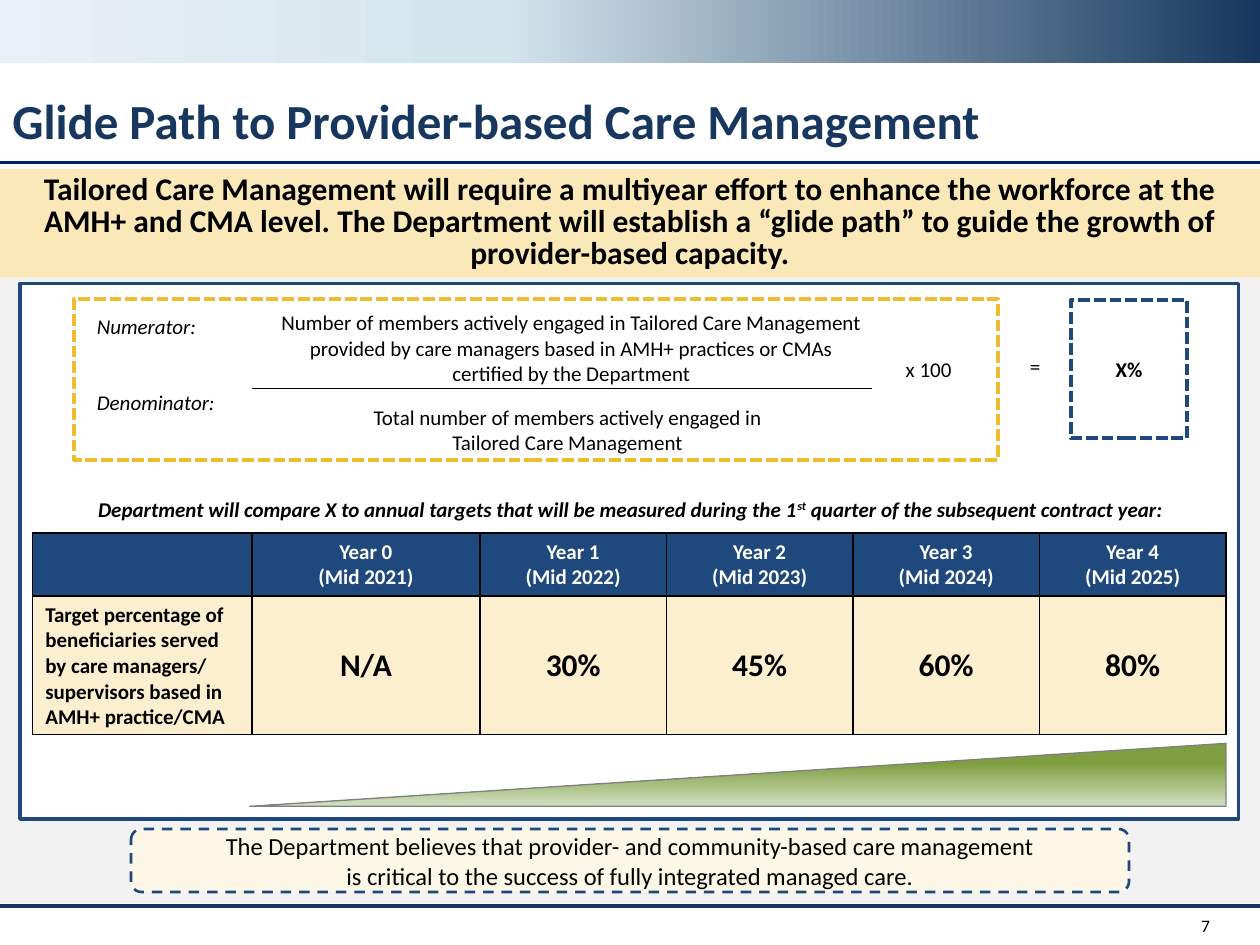
from dataclasses import dataclass

from lxml import etree
from pptx import Presentation
from pptx.dml.color import RGBColor
from pptx.enum.dml import MSO_LINE
from pptx.enum.shapes import MSO_CONNECTOR, MSO_SHAPE
from pptx.enum.text import MSO_ANCHOR, PP_ALIGN
from pptx.oxml.ns import qn
from pptx.util import Inches, Pt

LEFT, CENTER, RIGHT = PP_ALIGN.LEFT, PP_ALIGN.CENTER, PP_ALIGN.RIGHT
TOP, MIDDLE = MSO_ANCHOR.TOP, MSO_ANCHOR.MIDDLE
RECTANGLE, ROUNDED = MSO_SHAPE.RECTANGLE, MSO_SHAPE.ROUNDED_RECTANGLE
TRIANGLE = MSO_SHAPE.RIGHT_TRIANGLE
DASH, SQUARE_DASH = MSO_LINE.DASH, MSO_LINE.SQUARE_DOT


@dataclass(frozen=True)
class Theme:
    font: str = "Calibri"
    navy: str = "17375E"
    rule: str = "002060"
    blue: str = "1F497D"
    gold: str = "EFBB2F"
    banner: str = "FAE8B8"
    cream: str = "FDF7E7"
    cell: str = "FBEFCF"
    gray: str = "F2F2F2"
    edge: str = "808080"
    white: str = "FFFFFF"
    black: str = "000000"
    header_stops: tuple = ((0, "17375E"), (60, "D3E4ED"), (100, "E9F1F6"))
    wedge_stops: tuple = ((31, "7F9E3F"), (100, "D3E0C3"))
    title: int = 28
    large: int = 18
    medium: int = 14
    body: int = 12
    small: int = 10


THEME = Theme()


@dataclass(frozen=True)
class Box:
    left: float
    top: float
    width: float
    height: float

    def lengths(self) -> tuple:
        return tuple(Inches(n) for n in (self.left, self.top, self.width, self.height))


@dataclass(frozen=True)
class TextStyle:
    size: int = THEME.body
    color: str = THEME.black
    bold: bool = False
    italic: bool = False
    align: PP_ALIGN = CENTER
    anchor: MSO_ANCHOR = TOP
    spacing: float = 1.0


@dataclass(frozen=True)
class Outline:
    color: str
    width: float
    dash: MSO_LINE | None = None


def rgb(color: str) -> RGBColor:
    return RGBColor.from_string(color)


def format_text(text_frame, style: TextStyle) -> None:
    for paragraph in text_frame.paragraphs:
        paragraph.alignment = style.align
        paragraph.line_spacing = style.spacing
        for run in paragraph.runs:
            font = run.font
            font.name, font.size = THEME.font, Pt(style.size)
            font.bold, font.italic = style.bold, style.italic
            font.color.rgb = rgb(style.color)


def write(shape, text: str, style: TextStyle):
    text_frame = shape.text_frame
    text_frame.word_wrap = True
    text_frame.vertical_anchor = style.anchor
    text_frame.text = text
    format_text(text_frame, style)
    return text_frame


def add_text(slide, box: Box, text: str, style: TextStyle):
    return write(slide.shapes.add_textbox(*box.lengths()), text, style)


def add_panel(slide, box: Box, fill: str | None = None,
              outline: Outline | None = None, kind=RECTANGLE):
    shape = slide.shapes.add_shape(kind, *box.lengths())
    shape.shadow.inherit = False
    if fill:
        shape.fill.solid()
        shape.fill.fore_color.rgb = rgb(fill)
    else:
        shape.fill.background()
    if outline:
        shape.line.color.rgb = rgb(outline.color)
        shape.line.width = Pt(outline.width)
        shape.line.dash_style = outline.dash
    else:
        shape.line.fill.background()
    return shape


def set_gradient(shape, stops: tuple, angle: int) -> None:
    """Replace the fill with a linear gradient of (percent, colour) stops."""
    properties = shape._element.spPr
    gradient = etree.Element(qn("a:gradFill"), rotWithShape="1")
    stop_list = etree.SubElement(gradient, qn("a:gsLst"))
    for percent, color in stops:
        stop = etree.SubElement(stop_list, qn("a:gs"), pos=str(percent * 1000))
        etree.SubElement(stop, qn("a:srgbClr"), val=color)
    etree.SubElement(gradient, qn("a:lin"), ang=str(angle * 60000), scaled="0")
    properties.replace(properties.find(qn("a:noFill")), gradient)


def add_rule(slide, left: float, right: float, y: float, outline: Outline) -> None:
    line = slide.shapes.add_connector(
        MSO_CONNECTOR.STRAIGHT, Inches(left), Inches(y), Inches(right), Inches(y))
    line.line.color.rgb = rgb(outline.color)
    line.line.width = Pt(outline.width)
    etree.SubElement(line._element.spPr, qn("a:effectLst"))


def set_borders(cell) -> None:
    properties = cell._tc.get_or_add_tcPr()
    for index, side in enumerate(("a:lnL", "a:lnR", "a:lnT", "a:lnB")):
        border = etree.Element(qn(side), w=str(Pt(1)))
        fill = etree.SubElement(border, qn("a:solidFill"))
        etree.SubElement(fill, qn("a:srgbClr"), val=THEME.black)
        properties.insert(index, border)


def add_targets_table(slide) -> None:
    targets = ["N/A", "30%", "45%", "60%", "80%"]
    header = [""] + [f"Year {n}\n(Mid {2021 + n})" for n in range(len(targets))]
    label = ("Target percentage of beneficiaries served by care managers/\n"
             "supervisors based in AMH+ practice/CMA")
    header_style = TextStyle(color=THEME.white, bold=True)
    label_style = TextStyle(bold=True, align=LEFT)
    target_style = TextStyle(size=THEME.large, bold=True)
    rows = [
        (0.5, THEME.blue, header, [header_style] * len(header)),
        (1.1, THEME.cell, [label] + targets, [label_style] + [target_style] * len(targets)),
    ]
    box = Box(0.26, 4.23, 9.47, 1.6)
    table = slide.shapes.add_table(len(rows), len(header), *box.lengths()).table
    for column, width in zip(table.columns, [1.74, 1.81] + [1.48] * 4):
        column.width = Inches(width)
    for row, (height, fill, texts, styles) in zip(table.rows, rows):
        row.height = Inches(height)
        for cell, text, style in zip(row.cells, texts, styles):
            cell.text_frame.text = text
            cell.vertical_anchor = MIDDLE
            cell.fill.solid()
            cell.fill.fore_color.rgb = rgb(fill)
            format_text(cell.text_frame, style)
            set_borders(cell)


def add_frame(slide) -> None:
    """Header band, title, rules, backdrop and page number."""
    set_gradient(add_panel(slide, Box(0, 0, 10, 0.5)), THEME.header_stops, 180)
    add_rule(slide, 0, 10, 1.29, Outline(THEME.rule, 2))
    add_panel(slide, Box(0, 1.49, 10, 5.68), THEME.gray)
    add_rule(slide, 0, 10, 7.19, Outline(THEME.navy, 2.25))
    add_text(slide, Box(0, 0.68, 9.27, 0.6), "Glide Path to Provider-based Care Management",
             TextStyle(THEME.title, THEME.navy, True, align=LEFT, anchor=MIDDLE, spacing=0.9))
    add_text(slide, Box(9.08, 7.19, 0.62, 0.31), "7",
             TextStyle(THEME.small, align=RIGHT, anchor=MIDDLE))


def add_messages(slide) -> None:
    banner = add_panel(slide, Box(0, 1.34, 10, 0.86), THEME.banner)
    frame = write(banner, "Tailored Care Management will require a multiyear effort to enhance the "
                  "workforce at the AMH+ and CMA level. The Department will establish a “glide "
                  "path” to guide the growth of provider-based capacity.",
                  TextStyle(THEME.large, bold=True, anchor=MIDDLE, spacing=0.85))
    frame.margin_left = frame.margin_right = Inches(0.3)
    frame.margin_top = frame.margin_bottom = Inches(0.06)
    belief = add_panel(slide, Box(1.04, 6.58, 7.92, 0.5), THEME.cream,
                       Outline(THEME.blue, 1.5, DASH), ROUNDED)
    write(belief, "The Department believes that provider- and community-based care management\n"
          "is critical to the success of fully integrated managed care.",
          TextStyle(THEME.medium, anchor=MIDDLE))


def add_formula(slide) -> None:
    labels = add_text(slide, Box(0.67, 2.44, 1.35, 1.11), "Numerator:\nDenominator:",
                      TextStyle(italic=True, align=LEFT))
    labels.paragraphs[1].space_before = Pt(28.8)
    add_panel(slide, Box(0.59, 2.37, 7.33, 1.28), outline=Outline(THEME.gold, 2.25, SQUARE_DASH))
    result = add_panel(slide, Box(8.5, 2.38, 0.92, 1.1),
                       outline=Outline(THEME.blue, 2.25, SQUARE_DASH))
    write(result, "X%", TextStyle(bold=True, anchor=MIDDLE))
    for box, text in (
        (Box(2.08, 2.41, 4.91, 0.71),
         "Number of members actively engaged in Tailored Care Management provided by care "
         "managers based in AMH+ practices or CMAs\ncertified by the Department"),
        (Box(2.1, 3.16, 4.81, 0.5),
         "Total number of members actively engaged in\nTailored Care Management"),
        (Box(7, 2.78, 0.74, 0.3), "x 100"),
        (Box(7.88, 2.76, 0.67, 0.3), "="),
    ):
        add_text(slide, box, text, TextStyle())
    add_rule(slide, 2, 6.92, 3.08, Outline(THEME.black, 0.5))


def add_comparison_note(slide) -> None:
    style = TextStyle(bold=True, italic=True, align=LEFT)
    frame = add_text(slide, Box(0.68, 3.89, 9.3, 0.3), "Department will compare X to annual "
                     "targets that will be measured during the 1", style)
    paragraph = frame.paragraphs[0]
    ordinal, ending = paragraph.add_run(), paragraph.add_run()
    ordinal.text, ending.text = "st", " quarter of the subsequent contract year:"
    format_text(frame, style)
    ordinal._r.get_or_add_rPr().set("baseline", "30000")


def add_growth_wedge(slide) -> None:
    wedge = add_panel(slide, Box(1.98, 5.9, 7.75, 0.5),
                      outline=Outline(THEME.edge, 0), kind=TRIANGLE)
    set_gradient(wedge, THEME.wedge_stops, 90)
    wedge._element.spPr.find(qn("a:xfrm")).set("flipH", "1")


def main() -> None:
    presentation = Presentation()
    presentation.slide_width, presentation.slide_height = Inches(10), Inches(7.5)
    slide = presentation.slides.add_slide(presentation.slide_layouts[6])
    add_frame(slide)
    add_messages(slide)
    add_panel(slide, Box(0.16, 2.25, 9.67, 4.25), THEME.white, Outline(THEME.blue, 2.25))
    add_formula(slide)
    add_comparison_note(slide)
    add_targets_table(slide)
    add_growth_wedge(slide)
    presentation.save("out.pptx")


if __name__ == "__main__":
    main()
